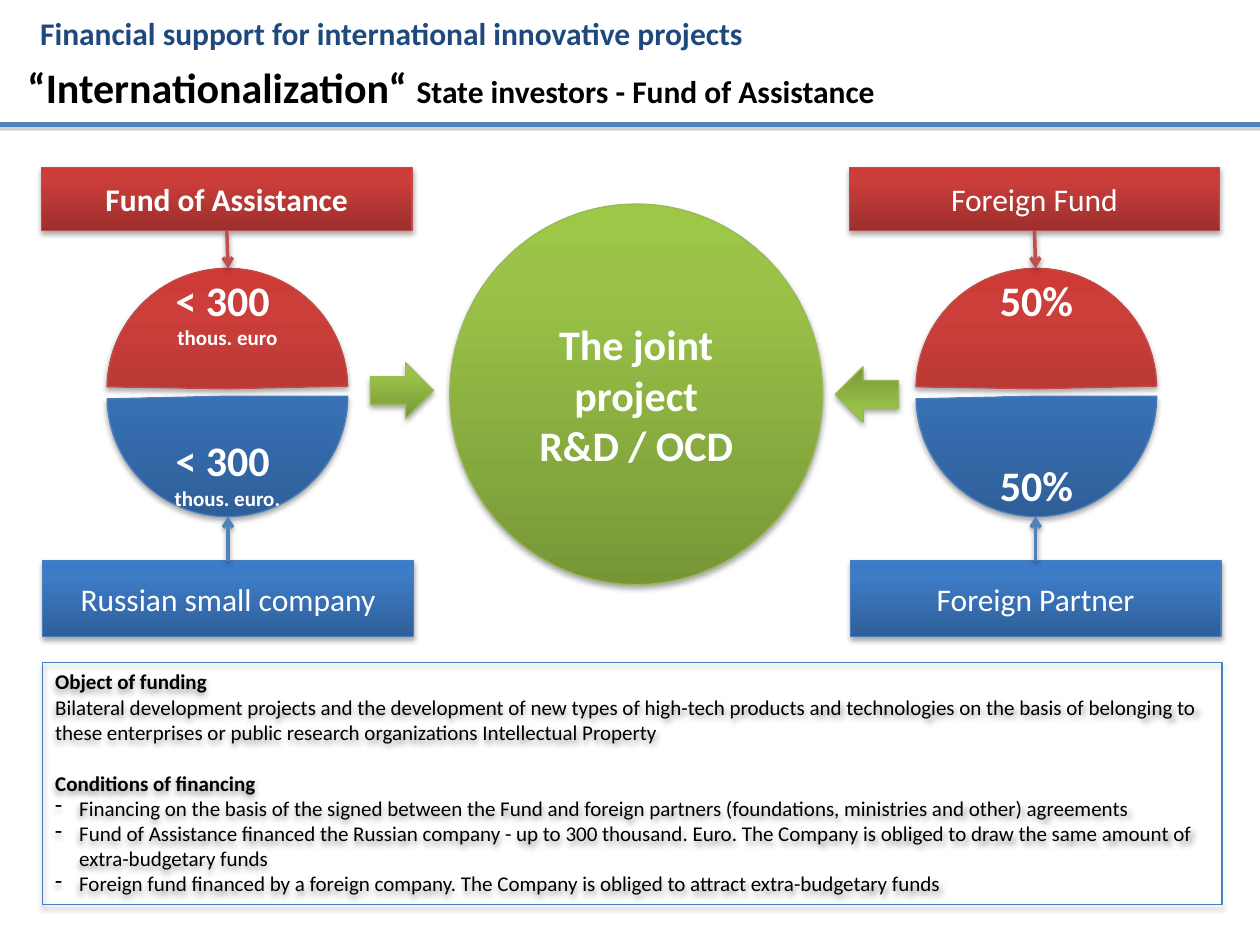
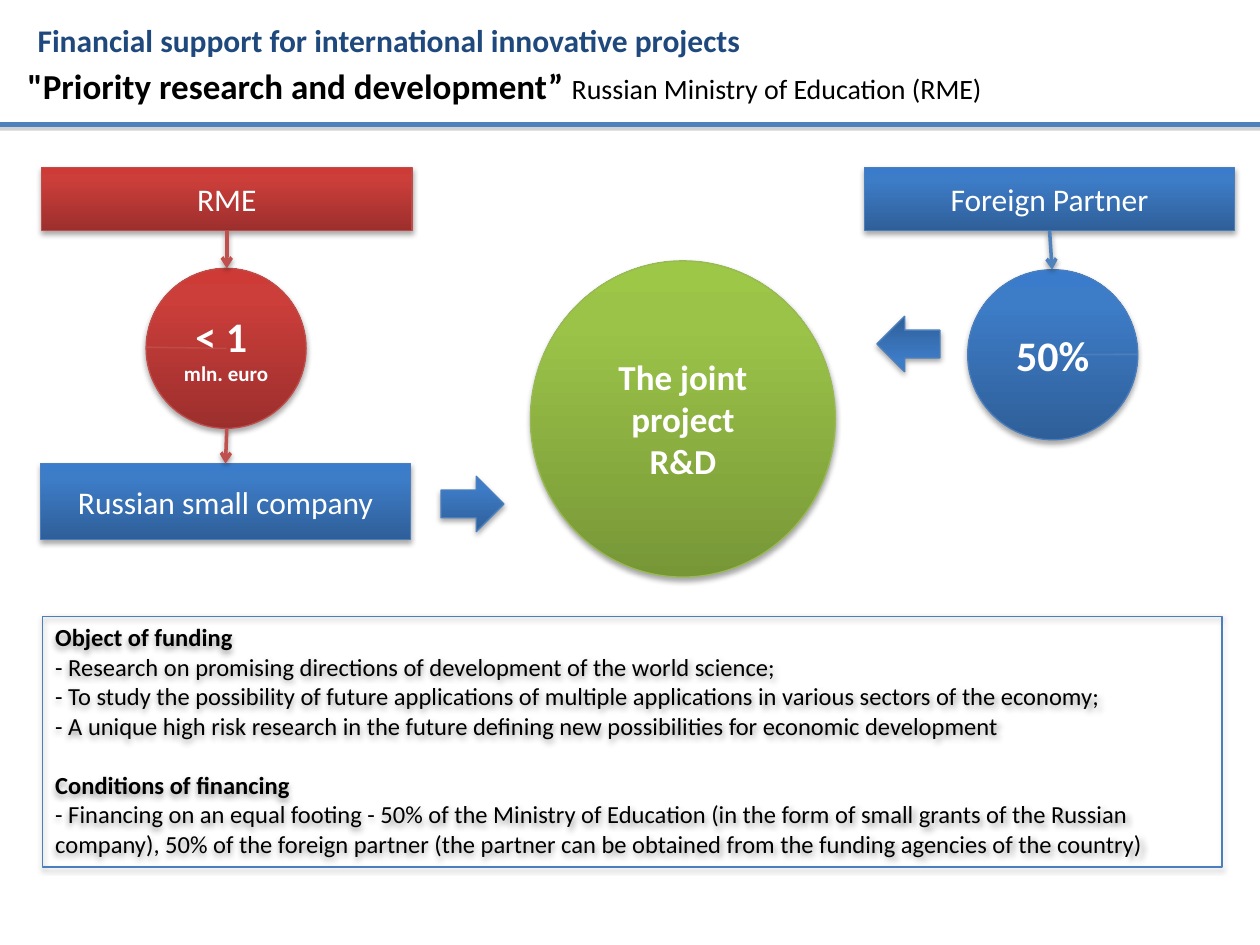
import copy
import lxml.etree
import pptx
import pptx.dml.color
import pptx.enum.shapes
import pptx.enum.text
import pptx.oxml
import pptx.oxml.ns
import pptx.util

Inches = pptx.util.Inches
Pt = pptx.util.Pt
Color = pptx.dml.color.RGBColor
Shape = pptx.enum.shapes.MSO_SHAPE
Anchor = pptx.enum.text.MSO_ANCHOR
Align = pptx.enum.text.PP_ALIGN
qn = pptx.oxml.ns.qn

FONT = "Calibri"
BLACK = Color(0x00, 0x00, 0x00)
WHITE = Color(0xFF, 0xFF, 0xFF)
GREY = Color(0x80, 0x80, 0x80)
NAVY = Color(0x1F, 0x49, 0x7D)
EDGE = Color(0x05, 0x46, 0x97)
RED_LINK = Color(0xC0, 0x50, 0x4D)
BLUE_LINK = Color(0x4F, 0x81, 0xBD)
BLUE_RIM = Color(0x4B, 0x7E, 0xBC)

# Each hue: gradient from bottom to top, then the rim.
RED = (Color(0x9C, 0x2F, 0x2D), Color(0xCB, 0x3E, 0x3A),
       Color(0xCE, 0x3B, 0x37), Color(0xBF, 0x4C, 0x48))
BLUE = (Color(0x2F, 0x5F, 0x99), Color(0x3D, 0x7C, 0xC7),
        Color(0x3A, 0x7C, 0xCB), BLUE_RIM)
GREEN = (Color(0x77, 0x97, 0x37), Color(0x9B, 0xC3, 0x48),
         Color(0x9D, 0xC7, 0x46), Color(0x98, 0xB9, 0x55))
STOPS = (0, 0.8, 1)

TOPIC = "Financial support for international innovative projects"
BOX_W = 2.94
ARROW = (0.5, 0.44)
LOWER, UPPER = (0, 107.25), (108.55, 215.24)
BOTTOM, TOP = 2, 0

# boxes: name: (text, hue, left, top, height, bold)
# pies: (hue, left, top, size, angles, anchor, [(text, points)])
# links: (colour, box, side, far point, arrow points at the box)
# arrows: (hue, left, top, turn)
# notes: (kind, text)
SLIDES = [
    {
        "topic": (0.22, 0.06),
        "title": (0.44, 0.5, [("“Internationalization“ ", 24, True),
                              ("State investors - Fund of Assistance", 18, True)]),
        "boxes": {
            "fund": ("Fund of Assistance", RED, 0.33, 1.33, 0.5, True),
            "firm": ("Russian small company", BLUE, 0.34, 4.45, 0.6, False),
            "abroad": ("Foreign Fund", RED, 6.74, 1.33, 0.5, False),
            "partner": ("Foreign Partner", BLUE, 6.75, 4.45, 0.6, False),
        },
        "pies": [
            (BLUE, 0.85, 2.19, 1.91, LOWER, Anchor.BOTTOM, [("< 300 ", 24), ("thous. euro.", 12)]),
            (RED, 0.85, 2.13, 1.91, UPPER, Anchor.TOP, [("< 300 ", 24), ("thous. euro", 12)]),
            (BLUE, 7.27, 2.19, 1.91, LOWER, Anchor.BOTTOM, [("50%", 24)]),
            (RED, 7.27, 2.13, 1.91, UPPER, Anchor.TOP, [("50%", 24)]),
        ],
        "links": [
            (RED_LINK, "fund", BOTTOM, (1.81, 2.13), False),
            (BLUE_LINK, "firm", TOP, (1.81, 4.1), False),
            (RED_LINK, "abroad", BOTTOM, (8.22, 2.13), False),
            (BLUE_LINK, "partner", TOP, (8.22, 4.1), False),
        ],
        "project": ((3.57, 1.62, 2.96, 3.02), 24, ["The joint", " project ", "R&D / OCD"]),
        "arrows": [(GREEN, 2.94, 2.88, 0), (GREEN, 6.63, 2.91, 180)],
        "panel": (5.26, 1.92, 12),
        "notes": [
            ("head", "Object of funding"),
            ("text", "Bilateral development projects and the development of new types of high-tech products "
                     "and technologies on the basis of belonging to these enterprises or public research "
                     "organizations Intellectual Property"),
            ("head", "Conditions of financing"),
            ("item", "Financing on the basis of the signed between the Fund and foreign partners "
                     "(foundations, ministries and other) agreements"),
            ("item", "Fund of Assistance financed the Russian company - up to 300 thousand. Euro. "
                     "The Company is obliged to draw the same amount of extra-budgetary funds"),
            ("item", "Foreign fund financed by a foreign company. The Company is obliged to attract "
                     "extra-budgetary funds"),
        ],
    },
    {
        "topic": (0.2, 0.12),
        "title": (0.46, 0.44, [("\"Priority research and development” ", 20, True),
                               ("Russian Ministry of Education (RME)", 16, False)]),
        "boxes": {
            "state": ("RME", RED, 0.33, 1.33, 0.5, False),
            "firm": ("Russian small company", BLUE, 0.32, 3.68, 0.6, False),
            "partner": ("Foreign Partner", BLUE, 6.86, 1.33, 0.5, False),
        },
        "pies": [
            (RED, 1.16, 2.13, 1.27, (108.55, 108.43), Anchor.MIDDLE, [("< 1 ", 24), ("mln. euro", 12)]),
            (BLUE, 7.68, 2.14, 1.35, (0, 215.7), Anchor.MIDDLE, [("50%", 24)]),
        ],
        "links": [
            (RED_LINK, "state", BOTTOM, (1.8, 2.13), False),
            (BLUE_LINK, "partner", BOTTOM, (8.35, 2.14), False),
            (RED_LINK, "firm", TOP, (1.8, 3.4), True),
        ],
        "project": ((4.21, 2.07, 2.42, 2.51), 20, ["The joint", " project ", "R&D"]),
        "arrows": [(BLUE, 3.5, 3.78, 0), (BLUE, 6.96, 2.51, 180)],
        "panel": (4.89, 1.99, 14),
        "notes": [
            ("head", "Object of funding"),
            ("text", "- Research on promising directions of development of the world science;"),
            ("text", "- To study the possibility of future applications of multiple applications in "
                     "various sectors of the economy;"),
            ("text", "- A unique high risk research in the future defining new possibilities for "
                     "economic development"),
            ("head", "Conditions of financing"),
            ("text", "- Financing on an equal footing - 50% of the Ministry of Education (in the form "
                     "of small grants of the Russian company), 50% of the foreign partner (the partner "
                     "can be obtained from the funding agencies of the country)"),
        ],
    },
]


def node(parent, tag, **attrs):
    return lxml.etree.SubElement(parent, qn(tag), {k: str(v) for k, v in attrs.items()})


def shade(shape, blur=3.15, drop=1.8, alpha=35, color=BLACK):
    """Give the shape a soft shadow straight below it."""
    effect = node(shape._element.spPr, "a:effectLst")
    outer = node(effect, "a:outerShdw", blurRad=Pt(blur), dist=Pt(drop), dir=5400000, rotWithShape=0)
    node(node(outer, "a:srgbClr", val=color), "a:alpha", val=alpha * 1000)


def tint(shape, hue):
    """Fill with the hue's upright gradient and draw its rim."""
    shape.fill.gradient()
    shape.fill.gradient_angle = 90
    stops = shape._element.spPr.find(".//" + qn("a:gsLst"))
    stops.append(copy.deepcopy(stops[-1]))
    for stop, place, color in zip(shape.fill.gradient_stops, STOPS, hue):
        stop.position = place
        stop.color.rgb = color
    shape.line.color.rgb = hue[-1]
    shape.line.width = Pt(0.75)
    shade(shape)


def write(par, text, size, color, bold):
    run = par.add_run()
    run.text = text
    font = run.font
    font.name, font.size, font.bold = FONT, Pt(size), bold
    font.color.rgb = color
    return run


def lines(frame):
    """Yield the first paragraph of the frame, then new ones."""
    yield frame.paragraphs[0]
    while True:
        yield frame.add_paragraph()


def solid(slide, kind, area, hue, rows=(), bold=True, anchor=Anchor.MIDDLE):
    shape = slide.shapes.add_shape(kind, *map(Inches, area))
    tint(shape, hue)
    frame = shape.text_frame
    frame.word_wrap = True
    frame.vertical_anchor = anchor
    for (text, size), par in zip(rows, lines(frame)):
        par.alignment = Align.CENTER
        write(par, text, size, WHITE, bold)
    return shape


def label(slide, area, runs, color):
    frame = slide.shapes.add_textbox(*map(Inches, area)).text_frame
    frame.word_wrap = True
    return [write(frame.paragraphs[0], text, size, color, bold) for text, size, bold in runs]


def stroke(slide, start, end, color, width):
    line = slide.shapes.add_connector(pptx.enum.shapes.MSO_CONNECTOR.STRAIGHT,
                                      *map(Inches, start + end))
    line.line.color.rgb = color
    line.line.width = Pt(width)
    return line


def head(slide, data):
    rule = stroke(slide, (0, 0.99), (10, 0.99), BLUE_LINK, 3)
    shade(rule, blur=0, color=GREY)
    top, height, runs = data["title"]
    label(slide, (0.12, top, 8.5, height), runs, BLACK)
    run, = label(slide, data["topic"] + (7.38, 0.4), [(TOPIC, 18, True)], NAVY)
    props = run._r.get_or_add_rPr()
    edge = node(props, "a:ln", w=Pt(1))
    node(node(edge, "a:solidFill"), "a:srgbClr", val=EDGE)
    props.insert(0, edge)


def join(slide, boxes, color, name, side, far, inward):
    """Draw an arrow between a side of the named box and a far point."""
    link = stroke(slide, far, far, color, 2)
    if inward:
        link.end_connect(boxes[name], side)
    else:
        link.begin_connect(boxes[name], side)
    node(link._element.spPr.find(qn("a:ln")), "a:tailEnd", type="arrow")
    shade(link, drop=1.6, alpha=38)


def panel(slide, data):
    top, height, size = data["panel"]
    shape = slide.shapes.add_shape(Shape.RECTANGLE, *map(Inches, (0.34, top, 9.36, height)))
    shape.fill.background()
    shape.line.color.rgb = BLUE_RIM
    shape.line.width = Pt(0.75)
    shade(shape, drop=1.6, alpha=38)
    frame = shape.text_frame
    frame.word_wrap = True
    frame.vertical_anchor = Anchor.TOP
    for i, ((kind, text), par) in enumerate(zip(data["notes"], lines(frame))):
        par.alignment = Align.LEFT
        if kind == "head" and i:
            par.space_before = Pt(round(size * 1.22, 1))
        if kind == "item":
            props = par._p.get_or_add_pPr()
            props.set("marL", str(Inches(0.19)))
            props.set("indent", str(-Inches(0.19)))
            node(props, "a:buChar", char="-")
        write(par, text, size, BLACK, kind == "head")


def build(slide, data):
    head(slide, data)
    boxes = {}
    for name, (text, hue, left, top, height, bold) in data["boxes"].items():
        boxes[name] = solid(slide, Shape.RECTANGLE, (left, top, BOX_W, height),
                            hue, [(text, 18)], bold)
    for hue, left, top, size, angles, anchor, rows in data["pies"]:
        pie = solid(slide, Shape.PIE, (left, top, size, size), hue, rows, anchor=anchor)
        for i, angle in enumerate(angles):
            pie.adjustments[i] = angle
    for link in data["links"]:
        join(slide, boxes, *link)
    area, size, words = data["project"]
    solid(slide, Shape.OVAL, area, GREEN, [(word, size) for word in words])
    for hue, left, top, turn in data["arrows"]:
        solid(slide, Shape.RIGHT_ARROW, (left, top) + ARROW, hue).rotation = turn
    panel(slide, data)


def main():
    deck = pptx.Presentation()
    deck.slide_width, deck.slide_height = Inches(10), Inches(7.5)
    for data in SLIDES:
        build(deck.slides.add_slide(deck.slide_layouts[6]), data)
    deck.save("out.pptx")


if __name__ == "__main__":
    main()
